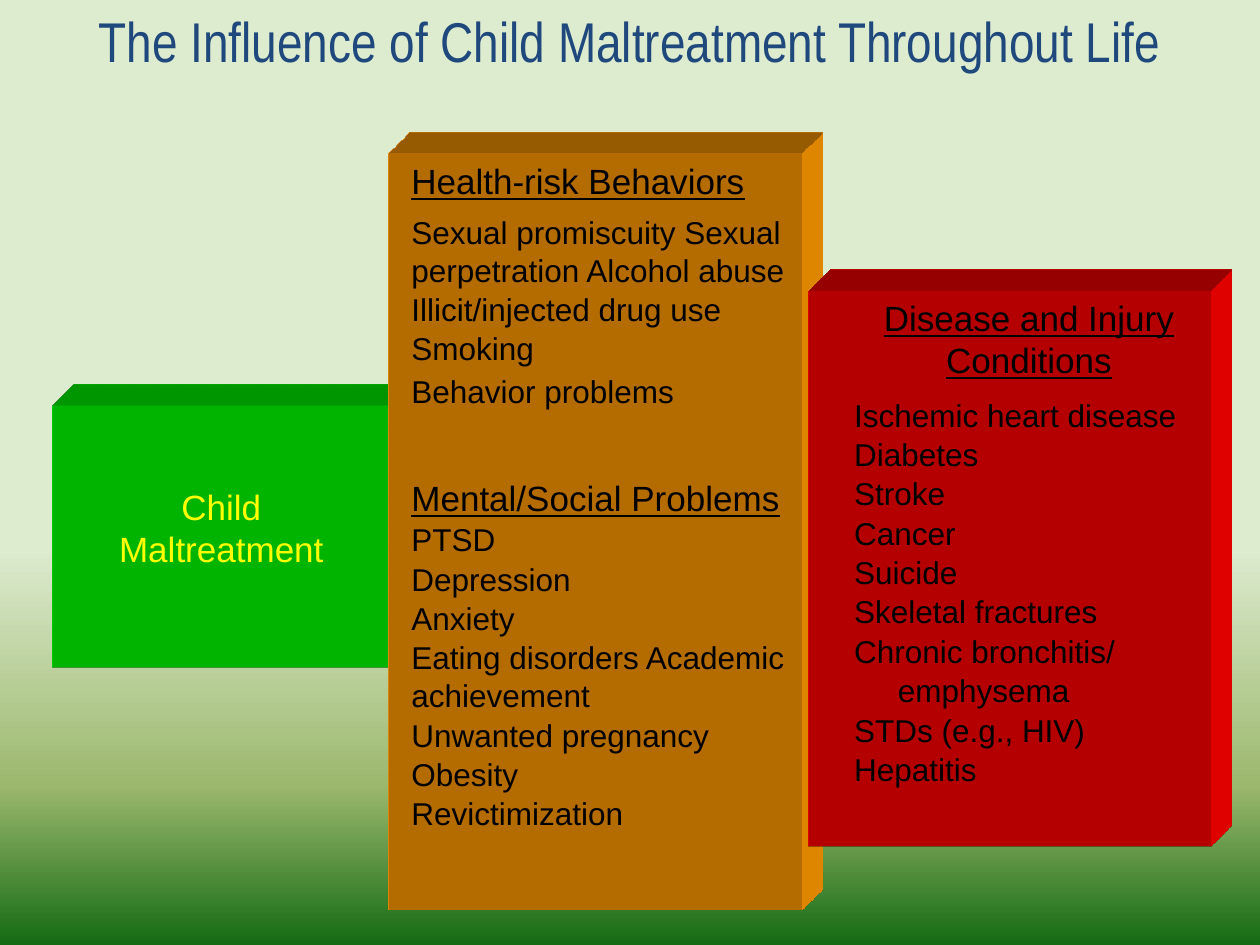
from copy import deepcopy
from dataclasses import dataclass

from lxml import etree
from pptx import Presentation
from pptx.dml.color import RGBColor
from pptx.enum import shapes, text
from pptx.oxml import ns
from pptx.util import Pt

ALIGN = text.PP_ALIGN
LINE_GAP = 0.9
BLACK = "000000"


@dataclass
class Block:
    left: float
    top: float
    width: float
    height: float
    fill: str


@dataclass
class Line:
    words: str
    size: float = 18
    underline: bool = False
    before: float = LINE_GAP
    indent: float = 0


@dataclass
class Label:
    left: float
    top: float
    width: float
    height: float
    lines: list[Line]
    align: ALIGN = ALIGN.LEFT
    color: str = BLACK
    font: str = "Arial"


BLOCKS = [
    Block(30, 231.75, 192, 150, "00FF00"),
    Block(222, 87.75, 236, 432, "FF9900"),
    Block(462, 166, 230, 318, "FF0000"),
]

BEHAVIORS = [
    Line("Sexual promiscuity Sexual perpetration Alcohol abuse"),
    Line("Illicit/injected drug use"),
    Line("Smoking"),
    Line("Behavior problems", before=3),
    Line("Mental/Social Problems", 20, True, before=38),
    *map(Line, ["PTSD", "Depression", "Anxiety",
                "Eating disorders Academic achievement",
                "Unwanted pregnancy", "Obesity", "Revictimization"]),
]

CONDITIONS = [
    *map(Line, ["Ischemic heart disease", "Diabetes", "Stroke", "Cancer",
                "Suicide", "Skeletal fractures", "Chronic bronchitis/"]),
    Line("emphysema", indent=25),
    *map(Line, ["STDs (e.g., HIV)", "Hepatitis"]),
]

LABELS = [
    Label(0, 0, 720, 45.5,
          [Line("The Influence of Child Maltreatment Throughout Life", 32)],
          ALIGN.CENTER, "1F497D", "Arial Narrow"),
    Label(54, 273.75, 145, 55.5, [Line("Child Maltreatment", 20)],
          ALIGN.CENTER, "FFFF00"),
    Label(228, 87.75, 244, 31, [Line("Health-risk Behaviors", 20, True)]),
    Label(228, 118, 240, 434, BEHAVIORS),
    Label(456, 166, 264, 55.5,
          [Line("Disease and Injury Conditions", 20, True)], ALIGN.CENTER),
    Label(481, 222.5, 239, 233, CONDITIONS),
]


def rgb(value: str) -> RGBColor:
    return RGBColor.from_string(value)


def paint_background(page) -> None:
    fill = page.background.fill
    fill.gradient()
    fill.gradient_angle = 270
    first = fill.gradient_stops[0]._gs
    first.addnext(deepcopy(first))
    stops = [(0.58, "DDEBCF"), (0.83, "9CB86E"), (1, "156B13")]
    for stop, (position, color) in zip(fill.gradient_stops, stops):
        stop.position = position
        stop.color.rgb = rgb(color)


def extrude(shape, color: str) -> None:
    """Give a shape depth towards the top right."""
    properties = shape._element.spPr
    scene = etree.SubElement(properties, ns.qn("a:scene3d"))
    etree.SubElement(scene, ns.qn("a:camera"), prst="legacyObliqueTopRight")
    etree.SubElement(scene, ns.qn("a:lightRig"), rig="legacyFlat3", dir="b")
    solid = etree.SubElement(properties, ns.qn("a:sp3d"),
                             extrusionH="430200", prstMaterial="legacyMatte")
    for bevel in ("a:bevelT", "a:bevelB"):
        etree.SubElement(solid, ns.qn(bevel), w="13500", h="13500", prst="angle")
    side = etree.SubElement(solid, ns.qn("a:extrusionClr"))
    etree.SubElement(side, ns.qn("a:srgbClr"), val=color)


def draw_block(page, block: Block) -> None:
    shape = page.shapes.add_shape(
        shapes.MSO_SHAPE.RECTANGLE, Pt(block.left), Pt(block.top),
        Pt(block.width), Pt(block.height))
    shape.shadow.inherit = False
    shape.fill.solid()
    shape.fill.fore_color.rgb = rgb(block.fill)
    shape.line.fill.background()
    extrude(shape, block.fill)


def draw_label(page, label: Label) -> None:
    box = page.shapes.add_textbox(Pt(label.left), Pt(label.top),
                                  Pt(label.width), Pt(label.height))
    frame = box.text_frame
    frame.word_wrap = True
    for index, line in enumerate(label.lines):
        para = frame.add_paragraph() if index else frame.paragraphs[0]
        para.alignment = label.align
        if index:
            para.space_before = Pt(line.before)
        if line.indent:
            para._p.get_or_add_pPr().set("marL", str(Pt(line.indent)))
        span = para.add_run()
        span.text = line.words
        span.font.name = label.font
        span.font.size = Pt(line.size)
        span.font.underline = line.underline
        span.font.color.rgb = rgb(label.color)


def main() -> None:
    deck = Presentation()
    deck.slide_width, deck.slide_height = Pt(720), Pt(540)
    page = deck.slides.add_slide(deck.slide_layouts[6])
    paint_background(page)

    # Title, then the three blocks, then their wording
    title, *captions = LABELS
    draw_label(page, title)
    for block in BLOCKS:
        draw_block(page, block)
    for caption in captions:
        draw_label(page, caption)

    deck.save("out.pptx")


if __name__ == "__main__":
    main()
